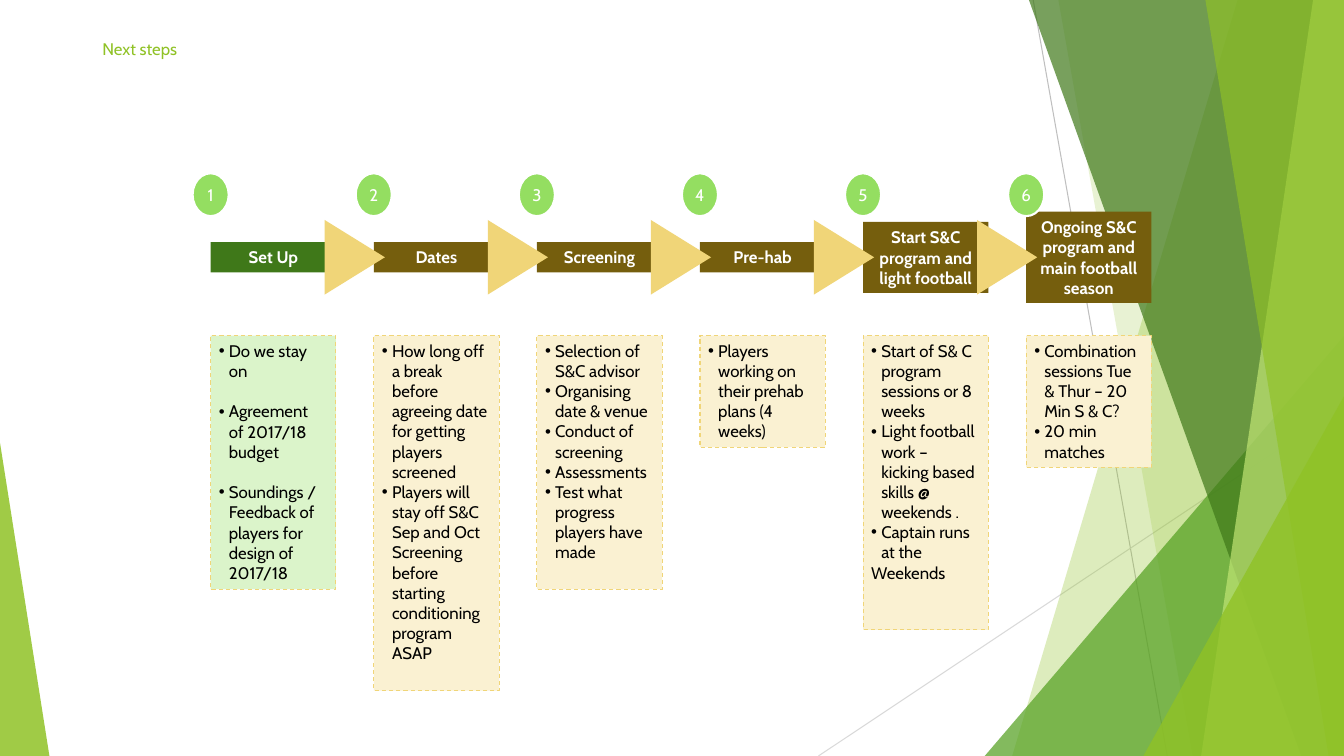
from lxml.etree import SubElement
from pptx import Presentation
from pptx.dml.color import RGBColor
from pptx.enum.dml import MSO_LINE
from pptx.enum.shapes import MSO_CONNECTOR, MSO_SHAPE as SHAPE
from pptx.enum.text import MSO_ANCHOR as ANCHOR, PP_ALIGN as ALIGN
from pptx.oxml.ns import qn
from pptx.util import Pt

WHITE = RGBColor(0xFF, 0xFF, 0xFF)
BLACK = RGBColor(0, 0, 0)
LIME = RGBColor(0x90, 0xC2, 0x26)
PALE_LIME = RGBColor(0xC0, 0xE4, 0x74)
GREEN = RGBColor(0x54, 0xA0, 0x21)
DARK_GREEN = RGBColor(0x3F, 0x78, 0x19)
BADGE_GREEN = RGBColor(0x94, 0xDE, 0x61)
MINT = RGBColor(0xDB, 0xF4, 0xCA)
BROWN = RGBColor(0x75, 0x5E, 0x0D)
GOLD = RGBColor(0xF0, 0xD5, 0x78)
CREAM = RGBColor(0xFA, 0xF1, 0xD2)
GREY = RGBColor(0xBF, 0xBF, 0xBF)
LIGHT_GREY = RGBColor(0xD9, 0xD9, 0xD9)

FONT = "Cabin"
WIDTH, HEIGHT = 960, 540
TITLE = "Next steps"

# heading, heading lines, body lines, space after each bullet, bullets, closing line
STEPS = [
    ("Set Up", 1, 12, 14.5,
     ["Do we stay on", "Agreement of 2017/18 budget",
      "Soundings / Feedback of players for design of 2017/18"], None),
    ("Dates", 1, 17, 0,
     ["How long off a break before agreeing date for getting players screened",
      "Players will stay off S&C Sep and Oct Screening before starting conditioning program ASAP"], None),
    ("Screening", 1, 12, 0,
     ["Selection of S&C advisor", "Organising date & venue", "Conduct of screening",
      "Assessments", "Test what progress players have made"], None),
    ("Pre-hab", 1, 5, 0, ["Players working on their prehab plans (4 weeks)"], None),
    ("Start S&C program and light football", 3, 14, 0,
     ["Start of S& C program sessions or 8 weeks",
      "Light football work – kicking based skills @ weekends .",
      "Captain runs at the"], "Weekends"),
    ("Ongoing S&C program and main football season", 4, 6, 0,
     ["Combination sessions Tue & Thur – 20 Min S & C?", "20 min matches"], None),
]

RAYS = [
    ((738, 0), (WIDTH, 0), GREY),
    ((WIDTH, 290), (584.6, HEIGHT), LIGHT_GREY),
]
RAY_ENDS = [((738, 0), (833.8, HEIGHT), GREY), RAYS[1]]

BANDS = [
    ("band", (884, WIDTH, WIDTH, 723), LIME, 30),
    ("band", (756, WIDTH, WIDTH, 851.8), LIME, 20),
    ("corner", (703.4, 240, 256.6, 300, 1), GREEN, 72),
    ("band", (735, WIDTH, WIDTH, 929.5), DARK_GREEN, 70),
    ("band", (938, WIDTH, WIDTH, 858), PALE_LIME, 70),
    ("band", (861, WIDTH, WIDTH, 949), LIME, 65),
    ("corner", (816.7, 283, 143.3, 257, 1), LIME, 80),
    ("corner", (0, 316.3, 35.3, 223.7, 0), LIME, 85),
]

FIRST_LEFT, PITCH, BOX_WIDTH = 150.5, 116.5, 89.5
LINE_HEIGHT, BOX_PADDING = 14.5, 7.2
HEADING_MIDDLE, BODY_TOP = 183.8, 239.7
ARROW_WIDTH, ARROW_HEIGHT, ARROW_OFFSET = 53.3, 43, 102.9
BADGE_WIDTH, BADGE_HEIGHT, BADGE_TOP = 25.8, 30.6, 123.8

deck = Presentation()
deck.slide_width, deck.slide_height = Pt(WIDTH), Pt(HEIGHT)
page = deck.slides.add_slide(deck.slide_layouts[6])


def paint(shape, fill, opacity=100, line=None, weight=0.75, dash=None):
    shape.shadow.inherit = False
    shape.fill.solid()
    shape.fill.fore_color.rgb = fill
    if opacity < 100:
        color = shape.fill._xPr.find(qn("a:solidFill"))[0]
        SubElement(color, qn("a:alpha")).set("val", str(opacity * 1000))
    if line is None:
        shape.line.fill.background()
    else:
        shape.line.color.rgb = line
        shape.line.width = Pt(weight)
        shape.line.dash_style = dash
    return shape


def add_box(kind, left, top, width, height, fill, **style):
    shape = page.shapes.add_shape(kind, Pt(left), Pt(top), Pt(width), Pt(height))
    return paint(shape, fill, **style)


def write(shape, text, color=WHITE, bold=False, align=ALIGN.CENTER, anchor=ANCHOR.MIDDLE,
          insets=(7.2, 3.6, 7.2, 3.6), bullets=0, after=0):
    frame = shape.text_frame
    frame.word_wrap = True
    frame.vertical_anchor = anchor
    frame.margin_left, frame.margin_top, frame.margin_right, frame.margin_bottom = map(Pt, insets)
    frame.text = text
    for index, para in enumerate(frame.paragraphs):
        para.alignment = align
        para.space_after = Pt(after)
        font = para.runs[0].font
        font.name, font.size, font.bold = FONT, Pt(12), bold
        font.color.rgb = color
        if index < bullets:
            properties = para._p.get_or_add_pPr()
            properties.set("marL", str(Pt(7.2)))
            properties.set("indent", str(Pt(-7.2)))
            SubElement(properties, qn("a:buFont")).set("typeface", "Arial")
            SubElement(properties, qn("a:buChar")).set("char", "•")


def draw_background():
    for start, end, color in RAY_ENDS:
        ray = page.shapes.add_connector(MSO_CONNECTOR.STRAIGHT, *map(Pt, start + end))
        ray.line.color.rgb = color
        ray.line.width = Pt(0.75)
        SubElement(ray._element.spPr, qn("a:effectLst"))
    for kind, numbers, color, opacity in BANDS:
        if kind == "corner":
            *place, apex = numbers
            corner = add_box(SHAPE.ISOSCELES_TRIANGLE, *place, color, opacity=opacity)
            corner.adjustments[0] = apex
        else:
            points = [(Pt(x), Pt(y)) for x, y in zip(numbers, (0, 0, HEIGHT, HEIGHT))]
            builder = page.shapes.build_freeform(*points[0])
            builder.add_line_segments(points[1:], close=True)
            paint(builder.convert_to_shape(), color, opacity)


def draw_boxes(left, first, heading, heading_lines, body_lines, after, bullets, closing):
    height = heading_lines * LINE_HEIGHT + BOX_PADDING
    header = add_box(SHAPE.RECTANGLE, left, HEADING_MIDDLE - height / 2, BOX_WIDTH, height,
                     DARK_GREEN if first else BROWN)
    write(header, heading, bold=True, insets=(2.9, 3.6, 2.9, 3.6))
    body = add_box(SHAPE.RECTANGLE, left, BODY_TOP, BOX_WIDTH,
                   body_lines * LINE_HEIGHT + BOX_PADDING,
                   MINT if first else CREAM, line=GOLD, dash=MSO_LINE.DASH)
    lines = bullets + ([closing] if closing else [])
    write(body, "\n".join(lines), color=BLACK, align=ALIGN.LEFT, anchor=ANCHOR.TOP,
          insets=(5.8, 3.6, 7.2, 3.6), bullets=len(bullets), after=after)


draw_background()
title = page.shapes.add_textbox(Pt(66), Pt(24.5), Pt(828), Pt(20.2))
write(title, TITLE, color=LIME, align=ALIGN.LEFT)

lefts = [FIRST_LEFT + index * PITCH for index in range(len(STEPS))]
for left, step in zip(lefts, STEPS):
    draw_boxes(left, left == FIRST_LEFT, *step)
for left in lefts[:-1]:
    arrow = add_box(SHAPE.ISOSCELES_TRIANGLE, left + ARROW_OFFSET - ARROW_WIDTH / 2,
                    HEADING_MIDDLE - ARROW_HEIGHT / 2, ARROW_WIDTH, ARROW_HEIGHT, GOLD)
    arrow.rotation = 90
for number, left in enumerate(lefts, 1):
    badge = add_box(SHAPE.OVAL, left - BADGE_WIDTH / 2, BADGE_TOP, BADGE_WIDTH, BADGE_HEIGHT,
                    BADGE_GREEN, line=WHITE, weight=1.5)
    write(badge, str(number), insets=(0, 0, 0, 0))

deck.save("out.pptx")
